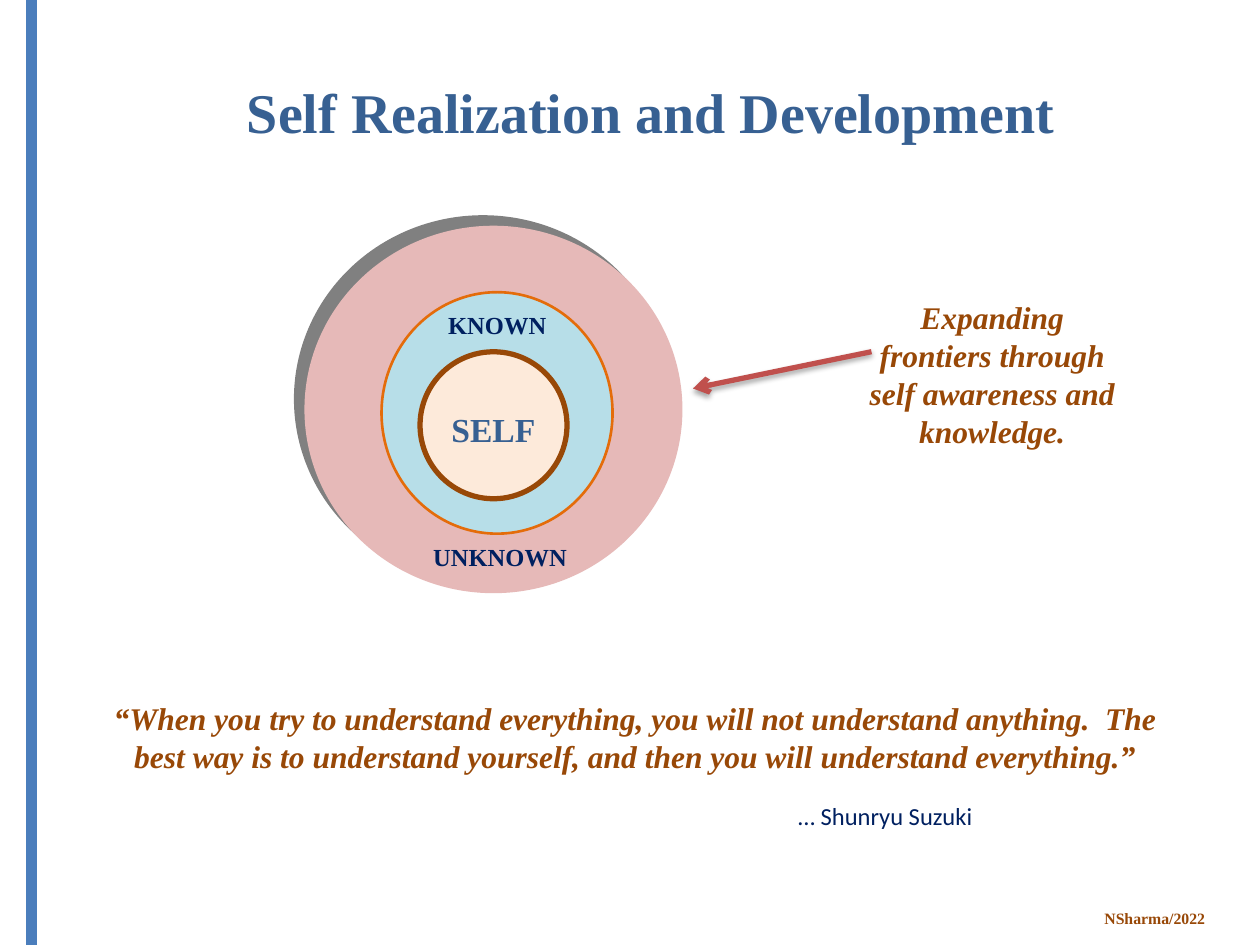
from lxml.etree import SubElement
from pptx import Presentation
from pptx.dml.color import RGBColor
from pptx.enum.shapes import MSO_CONNECTOR, MSO_SHAPE
from pptx.enum.text import MSO_ANCHOR, MSO_AUTO_SIZE, PP_ALIGN
from pptx.oxml.ns import qn
from pptx.util import Pt

BLUE = RGBColor(0x37, 0x60, 0x92)
BAR_BLUE = RGBColor(0x4B, 0x7E, 0xBC)
NAVY = RGBColor(0x00, 0x20, 0x60)
BROWN = RGBColor(0x98, 0x48, 0x07)
ORANGE = RGBColor(0xE4, 0x6C, 0x0A)
RED = RGBColor(0xC0, 0x50, 0x4D)
PINK = RGBColor(0xE6, 0xB9, 0xB8)
AQUA = RGBColor(0xB7, 0xDE, 0xE8)
CREAM = RGBColor(0xFD, 0xEA, 0xDA)
GREY = RGBColor(0x80, 0x80, 0x80)
BLACK = RGBColor(0, 0, 0)

SERIF, SANS = "Times New Roman", "Calibri"
SLIDE_WIDTH, SLIDE_HEIGHT = 720, 540

# Text styles: size, font, colour, bold, italic
TITLE = (32, SERIF, BLUE, True, False)
CORE = (24, SERIF, BLUE, True, False)
LABEL = (14, SERIF, NAVY, True, False)
SAYING = (18, SERIF, BROWN, True, True)
SOURCE = (14, SANS, NAVY, False, False)
FOOTER = (9, SERIF, BROWN, True, False)

# Rings, outermost first: left, top, width, height, fill, line colour, line width
RINGS = [
    (174, 129, 216, 210, PINK, None, 0),
    (218, 167, 132, 138, AQUA, ORANGE, 1.5),
    (240, 201, 84, 84, CREAM, BROWN, 3),
]

# Texts: left, top, width, height, paragraphs, style, alignment, wraps
TEXTS = [
    (249, 173.5, 71, 24.5, ["KNOWN"], LABEL, PP_ALIGN.LEFT, False),
    (240.5, 306, 94, 24.5, ["UNKNOWN"], LABEL, PP_ALIGN.LEFT, False),
    (462, 167, 210, 94,
     ["Expanding", "frontiers through", "self awareness and knowledge."],
     SAYING, PP_ALIGN.CENTER, True),
    (42, 396, 642, 51,
     ["“When you try to understand everything, you will not understand anything.  "
      "The best way is to understand yourself, and then you will understand everything.”"],
     SAYING, PP_ALIGN.CENTER, True),
    (449, 454, 114.5, 24.5, ["… Shunryu Suzuki"], SOURCE, PP_ALIGN.LEFT, False),
    (624, 515.5, 73.5, 18, ["NSharma/2022"], FOOTER, PP_ALIGN.LEFT, False),
]


def write(frame, paragraphs, style, alignment):
    size, font_name, colour, bold, italic = style
    for number, words in enumerate(paragraphs):
        paragraph = frame.add_paragraph() if number else frame.paragraphs[0]
        paragraph.alignment = alignment
        run = paragraph.add_run()
        run.text = words
        font = run.font
        font.size, font.name, font.bold, font.italic = Pt(size), font_name, bold, italic
        font.color.rgb = colour


def add_text(slide, left, top, width, height, paragraphs, style, alignment, wraps):
    box = slide.shapes.add_textbox(Pt(left), Pt(top), Pt(width), Pt(height))
    box.text_frame.word_wrap = wraps
    box.text_frame.auto_size = MSO_AUTO_SIZE.SHAPE_TO_FIT_TEXT
    write(box.text_frame, paragraphs, style, alignment)
    return box


def add_ring(slide, left, top, width, height, fill, line_colour, line_width):
    ring = slide.shapes.add_shape(
        MSO_SHAPE.OVAL, Pt(left), Pt(top), Pt(width), Pt(height))
    ring.fill.solid()
    ring.fill.fore_color.rgb = fill
    if line_colour is None:
        ring.line.fill.background()
    else:
        ring.line.color.rgb = line_colour
        ring.line.width = Pt(line_width)
    ring.shadow.inherit = False
    return ring


def add_line(slide, start, end, colour, width):
    line = slide.shapes.add_connector(
        MSO_CONNECTOR.STRAIGHT, *(Pt(value) for value in start + end))
    line.line.color.rgb = colour
    line.line.width = Pt(width)
    SubElement(line._element.spPr, qn("a:effectLst"))
    return line


def cast_shadow(shape, colour, opacity, blur, distance, angle):
    """Fill the empty effect list; opacity in percent, angle in degrees."""
    effects = shape._element.spPr.find(qn("a:effectLst"))
    shadow = SubElement(
        effects, qn("a:outerShdw"), blurRad=str(Pt(blur)), dist=str(Pt(distance)),
        dir=str(angle * 60000), algn="ctr", rotWithShape="0")
    shade = SubElement(shadow, qn("a:srgbClr"), val=str(colour))
    SubElement(shade, qn("a:alpha"), val=str(opacity * 1000))


def main():
    deck = Presentation()
    deck.slide_width, deck.slide_height = Pt(SLIDE_WIDTH), Pt(SLIDE_HEIGHT)
    slide = deck.slides.add_slide(deck.slide_layouts[6])

    add_line(slide, (18, 0), (18, SLIDE_HEIGHT), BAR_BLUE, 6)

    title = add_text(slide, 60, 18.75, 624, 90, ["Self Realization and Development"],
                     TITLE, PP_ALIGN.CENTER, True)
    title.text_frame.auto_size = MSO_AUTO_SIZE.NONE
    title.text_frame.vertical_anchor = MSO_ANCHOR.MIDDLE

    unknown, known, core = [add_ring(slide, *ring) for ring in RINGS]
    cast_shadow(unknown, GREY, 100, 0, 8.5, 225)
    core.text_frame.word_wrap = False
    core.text_frame.vertical_anchor = MSO_ANCHOR.MIDDLE
    write(core.text_frame, ["self"], CORE, PP_ALIGN.CENTER)
    core.text_frame.paragraphs[0].runs[0].font._element.set("cap", "small")

    arrow = add_line(slide, (396, 222), (498, 201), RED, 3)
    SubElement(arrow.line._get_or_add_ln(), qn("a:headEnd"), type="arrow")
    cast_shadow(arrow, BLACK, 35, 3.1, 1.8, 90)

    for text in TEXTS:
        add_text(slide, *text)

    deck.save("out.pptx")


if __name__ == "__main__":
    main()
